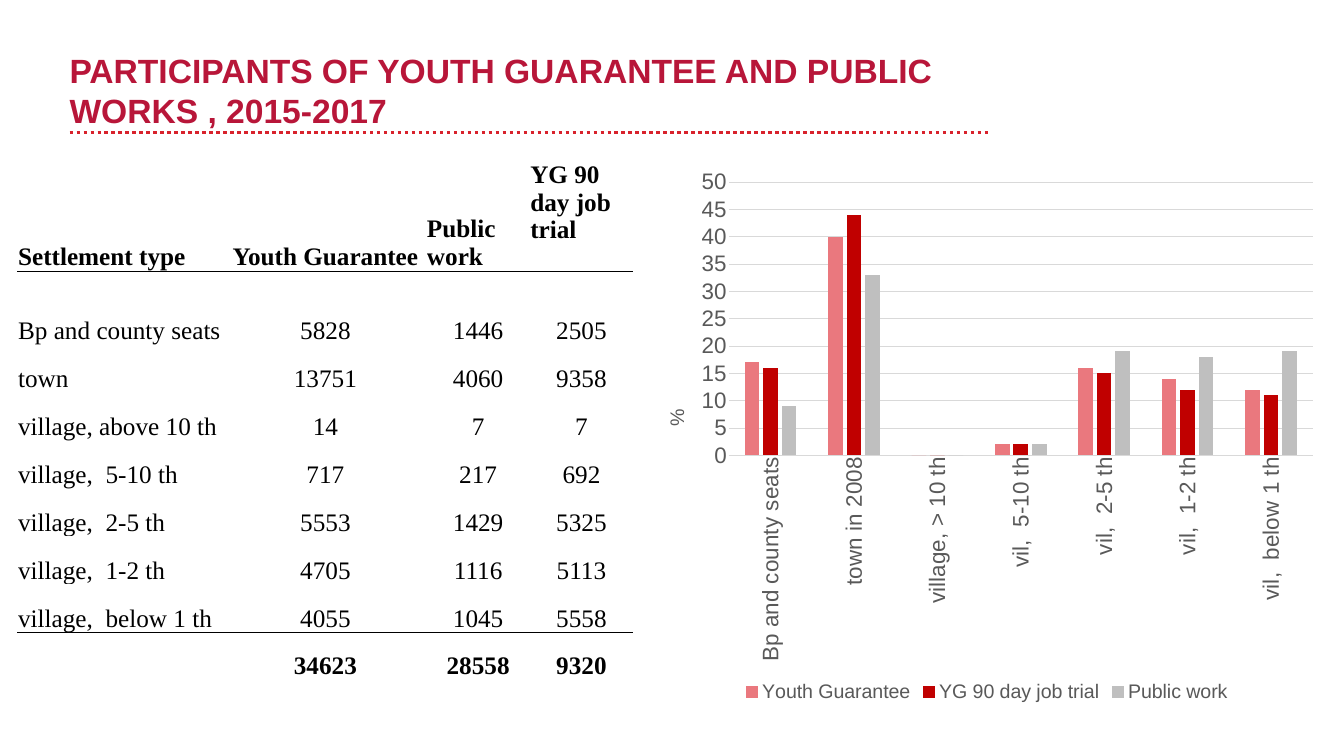
"""Build the slide on participants of youth guarantee and public works."""
from lxml.etree import SubElement
from pptx import Presentation
from pptx.chart.data import CategoryChartData
from pptx.dml.color import RGBColor
from pptx.enum.chart import XL_CHART_TYPE as ChartType, XL_LEGEND_POSITION as LegendPosition
from pptx.enum.chart import XL_TICK_MARK as TickMark
from pptx.enum.dml import MSO_LINE as Dash
from pptx.enum.shapes import MSO_CONNECTOR as Connector
from pptx.enum.text import MSO_ANCHOR as Anchor, PP_ALIGN as Align
from pptx.oxml import parse_xml
from pptx.oxml.ns import nsdecls, qn
from pptx.util import Inches, Pt

HEADERS = ["Settlement type", "Youth Guarantee", "Public work", "YG 90 day job trial"]
ROWS = [
    ("Bp and county seats", "5828", "1446", "2505"),
    ("town", "13751", "4060", "9358"),
    ("village, above 10 th", "14", "7", "7"),
    ("village,  5-10 th", "717", "217", "692"),
    ("village,  2-5 th", "5553", "1429", "5325"),
    ("village,  1-2 th", "4705", "1116", "5113"),
    ("village,  below 1 th", "4055", "1045", "5558"),
    ("", "34623", "28558", "9320"),
]
COLUMN_WIDTHS = [4.1, 4.01, 2.05, 2.05]
ROW_HEIGHTS = [2.2, 1.47] + [0.95] * 7
CATEGORIES = ["Bp and county seats", "town in 2008", "village, > 10 th", "vil,  5-10 th",
              "vil,  2-5 th", "vil,  1-2 th", "vil,  below 1 th"]
SERIES = [
    ("Youth Guarantee", "EA787E", (17, 40, 0, 2, 16, 14, 12)),
    ("YG 90 day job trial", "C00000", (16, 44, 0, 2, 15, 12, 11)),
    ("Public work", "BFBFBF", (9, 33, 0, 2, 19, 18, 19)),
]


def color(value):
    return RGBColor.from_string(value)


def apply(target, **values):
    for name, value in values.items():
        setattr(target, name, value)


def set_font(font, name, size, fill, bold=False):
    apply(font, name=name, size=Pt(size), bold=bold)
    font.color.rgb = color(fill)


def set_line(line, fill, width):
    line.color.rgb = color(fill)
    line.width = Pt(width)


def set_layout(element, index, **values):
    previous = element.find(qn("c:layout"))
    if previous is not None:
        element.remove(previous)
    layout = parse_xml(f"<c:layout {nsdecls('c')}><c:manualLayout/></c:layout>")
    for name, value in values.items():
        SubElement(layout[0], qn(f"c:{name}")).set("val", str(value))
    element.insert(index, layout)


def set_border(cell, side):
    cell._tc.get_or_add_tcPr().insert(0, parse_xml(
        f'<a:ln{side} {nsdecls("a")} w="6350"><a:solidFill><a:srgbClr val="000000"/>'
        f'</a:solidFill></a:ln{side}>'))


class SlideBuilder:
    sans, serif = "Arial", "Times New Roman"
    gray, grid, red, black = "595959", "D9D9D9", "B81639", "000000"

    def __init__(self, slide):
        self.slide = slide

    def rule(self, left, right, y):
        line = self.slide.shapes.add_connector(
            Connector.STRAIGHT, Inches(left), Inches(y), Inches(right), Inches(y))
        set_line(line.line, "D8222C", 5)
        line.line.dash_style = Dash.ROUND_DOT
        SubElement(line._element.spPr, qn("a:effectLst"))

    def title(self, text, *box):
        frame = self.slide.shapes.add_textbox(*map(Inches, box)).text_frame
        apply(frame, word_wrap=True, vertical_anchor=Anchor.MIDDLE,
              margin_left=0, margin_right=0, margin_top=0, margin_bottom=0)
        frame.text = text
        set_font(frame.paragraphs[0].runs[0].font, self.sans, 48, self.red, True)

    def cell(self, cell, text, bold, align, anchor):
        edge = Inches(0.01)
        apply(cell, text=text, vertical_anchor=anchor, margin_left=edge,
              margin_right=edge, margin_top=edge, margin_bottom=0)
        paragraph = cell.text_frame.paragraphs[0]
        paragraph.alignment = align
        set_font(paragraph.font, self.serif, 36, self.black, bold)
        for run in paragraph.runs:
            set_font(run.font, self.serif, 36, self.black, bold)

    def table(self, left, top):
        rows = [HEADERS, *ROWS]
        table = self.slide.shapes.add_table(
            len(rows), len(HEADERS), Inches(left), Inches(top),
            Inches(sum(COLUMN_WIDTHS)), Inches(sum(ROW_HEIGHTS))).table
        apply(table, first_row=False, horz_banding=False)
        for column, width in zip(table.columns, COLUMN_WIDTHS):
            column.width = Inches(width)
        for row, height in zip(table.rows, ROW_HEIGHTS):
            row.height = Inches(height)
        last = len(rows) - 1
        borders = {0: "B", 1: "T", last - 1: "B", last: "T"}
        for r, texts in enumerate(rows):
            for c, text in enumerate(texts):
                cell = table.cell(r, c)
                centered = c == 1 or (r > 0 and c > 0)
                self.cell(cell, text, r in (0, last), Align.CENTER if centered else Align.LEFT,
                          Anchor.TOP if (r, c) == (0, 3) else Anchor.BOTTOM)
                if r == 0:
                    cell.fill.background()
                else:
                    cell.fill.solid()
                    cell.fill.fore_color.rgb = color("FFFFFF")
                if r in borders:
                    set_border(cell, borders[r])

    def axes(self, chart):
        category, value = chart.category_axis, chart.value_axis
        for axis in (category, value):
            apply(axis, major_tick_mark=TickMark.NONE, minor_tick_mark=TickMark.NONE)
            set_font(axis.tick_labels.font, self.sans, 32, self.gray)
        set_line(category.format.line, self.grid, 0.75)
        category._element.find(qn("c:txPr")).find(qn("a:bodyPr")).set("rot", "-5400000")
        apply(value, minimum_scale=0, maximum_scale=50, major_unit=5)
        apply(value.tick_labels, number_format="0", number_format_is_linked=False)
        value.format.line.fill.background()
        set_line(value.major_gridlines.format.line, self.grid, 0.75)
        frame = value.axis_title.text_frame
        frame.text = "%"
        frame._txBody.find(qn("a:bodyPr")).set("rot", "-5400000")
        set_font(frame.paragraphs[0].runs[0].font, self.sans, 28, self.gray)
        set_layout(value.axis_title._element, 1, xMode="edge", yMode="edge", x=0.02, y=0.45)

    def chart(self, *box):
        data = CategoryChartData(number_format="0")
        data.categories = CATEGORIES
        for name, _, values in SERIES:
            data.add_series(name, values)
        chart = self.slide.shapes.add_chart(
            ChartType.COLUMN_CLUSTERED, *map(Inches, box), data).chart
        set_font(chart.font, self.sans, 10, self.black)
        apply(chart, has_title=False, has_legend=True)
        apply(chart.legend, position=LegendPosition.BOTTOM, include_in_layout=False)
        set_font(chart.legend.font, self.sans, 28, self.gray)
        plot = chart.plots[0]
        apply(plot, gap_width=219, overlap=-27, vary_by_categories=False)
        for series, (_, fill, _) in zip(plot.series, SERIES):
            series.format.fill.solid()
            series.format.fill.fore_color.rgb = color(fill)
        self.axes(chart)
        set_layout(chart._chartSpace.chart.plotArea, 0, layoutTarget="inner", xMode="edge",
                   yMode="edge", x=0.12, y=0.04, w=0.86, h=0.5)


def main():
    presentation = Presentation()
    apply(presentation, slide_width=Inches(26.66), slide_height=Inches(15))
    builder = SlideBuilder(presentation.slides.add_slide(presentation.slide_layouts[6]))
    builder.rule(1.38, 19.62, 2.63)
    builder.title("PARTICIPANTS OF YOUTH GUARANTEE AND PUBLIC WORKS , 2015-2017",
                  1.38, 0.98, 19.06, 1.62)
    builder.table(0.35, 3.18)
    builder.chart(12.84, 3.18, 13.47, 10.84)
    presentation.save("out.pptx")


if __name__ == "__main__":
    main()
